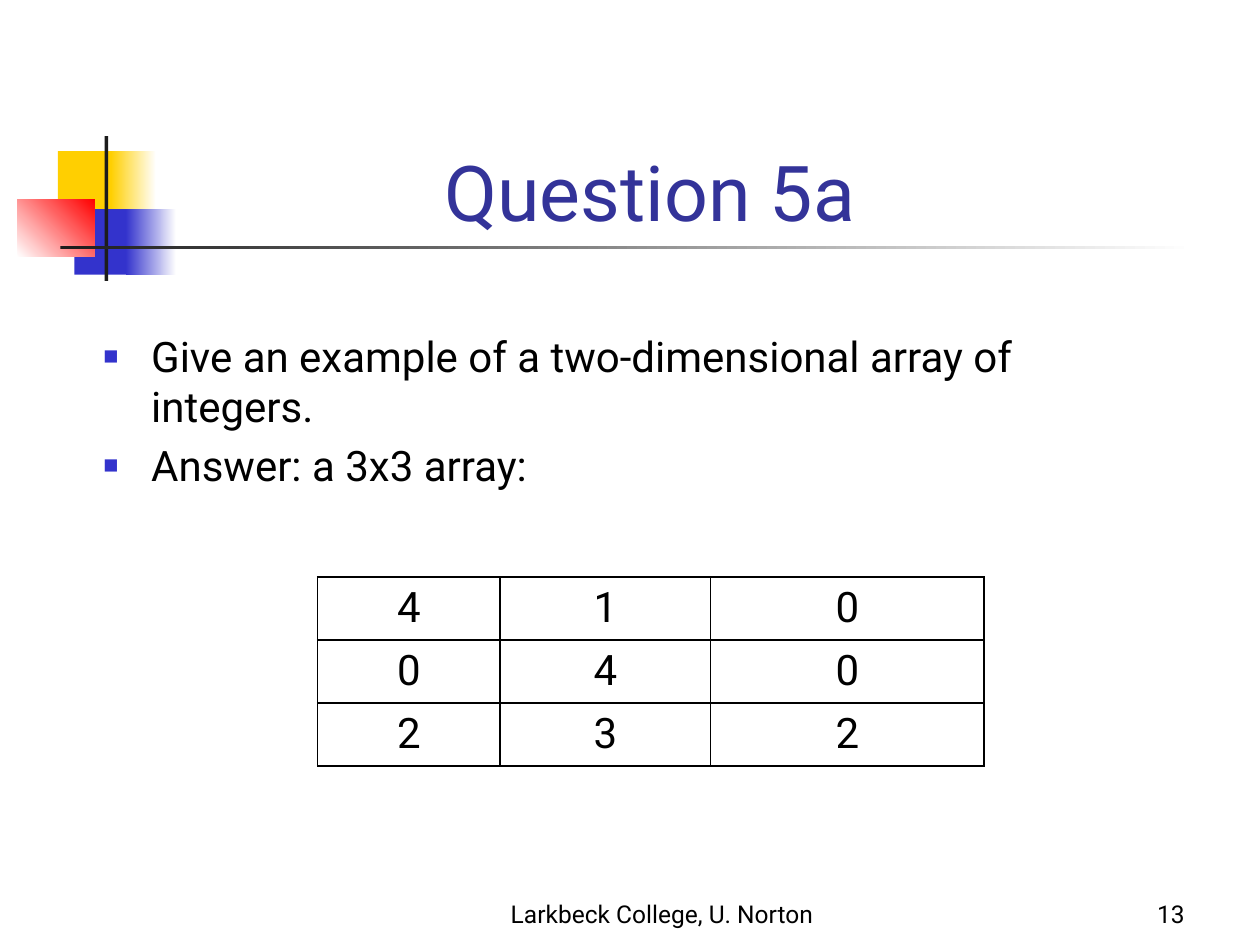
from dataclasses import dataclass

from lxml import etree
from pptx import Presentation
from pptx.dml.color import RGBColor
from pptx.enum.shapes import MSO_SHAPE
from pptx.enum.text import MSO_ANCHOR, PP_ALIGN
from pptx.oxml.ns import qn
from pptx.util import Inches, Pt

RECT = MSO_SHAPE.RECTANGLE
BOTTOM = MSO_ANCHOR.BOTTOM
LEFT, CENTER, RIGHT = PP_ALIGN.LEFT, PP_ALIGN.CENTER, PP_ALIGN.RIGHT


@dataclass(frozen=True)
class Theme:
    font: str = "Roboto"
    title: str = "333399"
    text: str = "000000"
    white: str = "FFFFFF"
    yellow: str = "FFCF01"
    blue: str = "3333CC"
    red: str = "FF0000"
    bar: str = "1C1C1C"
    title_size: int = 44
    body_size: int = 24
    footer_size: int = 14


THEME = Theme()


def rgb(color):
    return RGBColor.from_string(color)


def place(sp, box):
    sp.left, sp.top, sp.width, sp.height = (Inches(v) for v in box)


def style(p, size, color=THEME.text, align=LEFT):
    p.alignment = align
    p.font.name = THEME.font
    p.font.size = Pt(size)
    p.font.color.rgb = rgb(color)


def add_block(s, box, start, end=None, angle=0):
    """Add a borderless rectangle, filled solid or as a gradient to end."""
    sp = s.shapes.add_shape(RECT, *(Inches(v) for v in box))
    sp.shadow.inherit = False
    sp.line.fill.background()
    if end is None:
        sp.fill.solid()
        sp.fill.fore_color.rgb = rgb(start)
        return
    sp.fill.gradient()
    sp.fill.gradient_angle = angle
    for stop, color, position in zip(sp.fill.gradient_stops, (start, end), (0, 1)):
        stop.color.rgb = rgb(color)
        stop.position = position


def add_ornament(s, box):
    x, y, w, h = box
    t = THEME
    add_block(s, (x + 0.32, y + 0.12, 0.48, 0.52), t.yellow)
    add_block(s, (x + 0.74, y + 0.12, 0.36, 0.52), t.yellow, t.white)
    add_block(s, (x + 0.45, y + 0.58, 0.46, 0.52), t.blue)
    add_block(s, (x + 0.86, y + 0.58, 0.4, 0.52), t.blue, t.white)
    add_block(s, (x, y + 0.5, 0.61, 0.46), t.white, t.red, angle=45)
    add_block(s, (x + 0.69, y, 0.03, h), t.bar)
    add_block(s, (x + 0.34, y + 0.87, w - 0.34, 0.03), t.bar, t.white)


def fill_title(sp, box, text):
    place(sp, box)
    tf = sp.text_frame
    tf.text = text
    tf.vertical_anchor = BOTTOM
    style(tf.paragraphs[0], THEME.title_size, THEME.title, CENTER)


def add_bullet(p):
    pPr = p._p.get_or_add_pPr()
    pPr.set("marL", str(Inches(0.38)))
    pPr.set("indent", str(Inches(-0.38)))
    color = etree.Element(qn("a:buClr"))
    etree.SubElement(color, qn("a:srgbClr"), val=THEME.blue)
    size = etree.Element(qn("a:buSzPct"), val="60000")
    char = etree.Element(qn("a:buChar"), char="■")
    # Bullet settings come before the default run properties.
    for position, element in enumerate((color, size, char)):
        pPr.insert(position, element)


def fill_body(sp, box, items):
    place(sp, box)
    tf = sp.text_frame
    tf.text = "\n".join(items)
    for p in tf.paragraphs:
        style(p, THEME.body_size)
        add_bullet(p)


def add_footer(s, box, text, align):
    tf = s.shapes.add_textbox(*(Inches(v) for v in box)).text_frame
    tf.word_wrap = True
    tf.vertical_anchor = BOTTOM
    tf.text = text
    style(tf.paragraphs[0], THEME.footer_size, align=align)


def add_borders(cell):
    tcPr = cell._tc.get_or_add_tcPr()
    for position, side in enumerate(("lnL", "lnR", "lnT", "lnB")):
        ln = etree.Element(qn(f"a:{side}"), w=str(Pt(1)))
        fill = etree.SubElement(ln, qn("a:solidFill"))
        etree.SubElement(fill, qn("a:srgbClr"), val=THEME.text)
        tcPr.insert(position, ln)


def add_array_table(s, box, col_widths, values):
    frame = s.shapes.add_table(len(values), len(col_widths), *(Inches(v) for v in box))
    table = frame.table
    table.first_row = table.horz_banding = False
    for column, width in zip(table.columns, col_widths):
        column.width = Inches(width)
    for r, row in enumerate(values):
        for c, value in enumerate(row):
            cell = table.cell(r, c)
            cell.text = str(value)
            cell.fill.solid()
            cell.fill.fore_color.rgb = rgb(THEME.white)
            style(cell.text_frame.paragraphs[0], THEME.body_size, align=CENTER)
            add_borders(cell)


def main():
    prs = Presentation()
    prs.slide_width, prs.slide_height = Inches(10), Inches(7.5)
    s = prs.slides.add_slide(prs.slide_layouts[1])
    add_ornament(s, (0.14, 1.08, 9.34, 1.15))
    fill_title(s.shapes.title, (0.9, 0.68, 8.52, 1.25), "Question 5a")
    fill_body(s.placeholders[1], (0.72, 2.57, 8.73, 1.65), [
        "Give an example of a two-dimensional array of integers.",
        "Answer: a 3x3 array:",
    ])
    add_footer(s, (3.67, 6.92, 3.17, 0.5), "Larkbeck College, U. Norton", CENTER)
    add_footer(s, (7.42, 6.92, 2.08, 0.5), "13", RIGHT)
    add_array_table(s, (2.52, 4.58, 5.29, 1.23), (1.45, 1.67, 2.17),
                    [[4, 1, 0], [0, 4, 0], [2, 3, 2]])
    prs.save("out.pptx")


if __name__ == "__main__":
    main()
